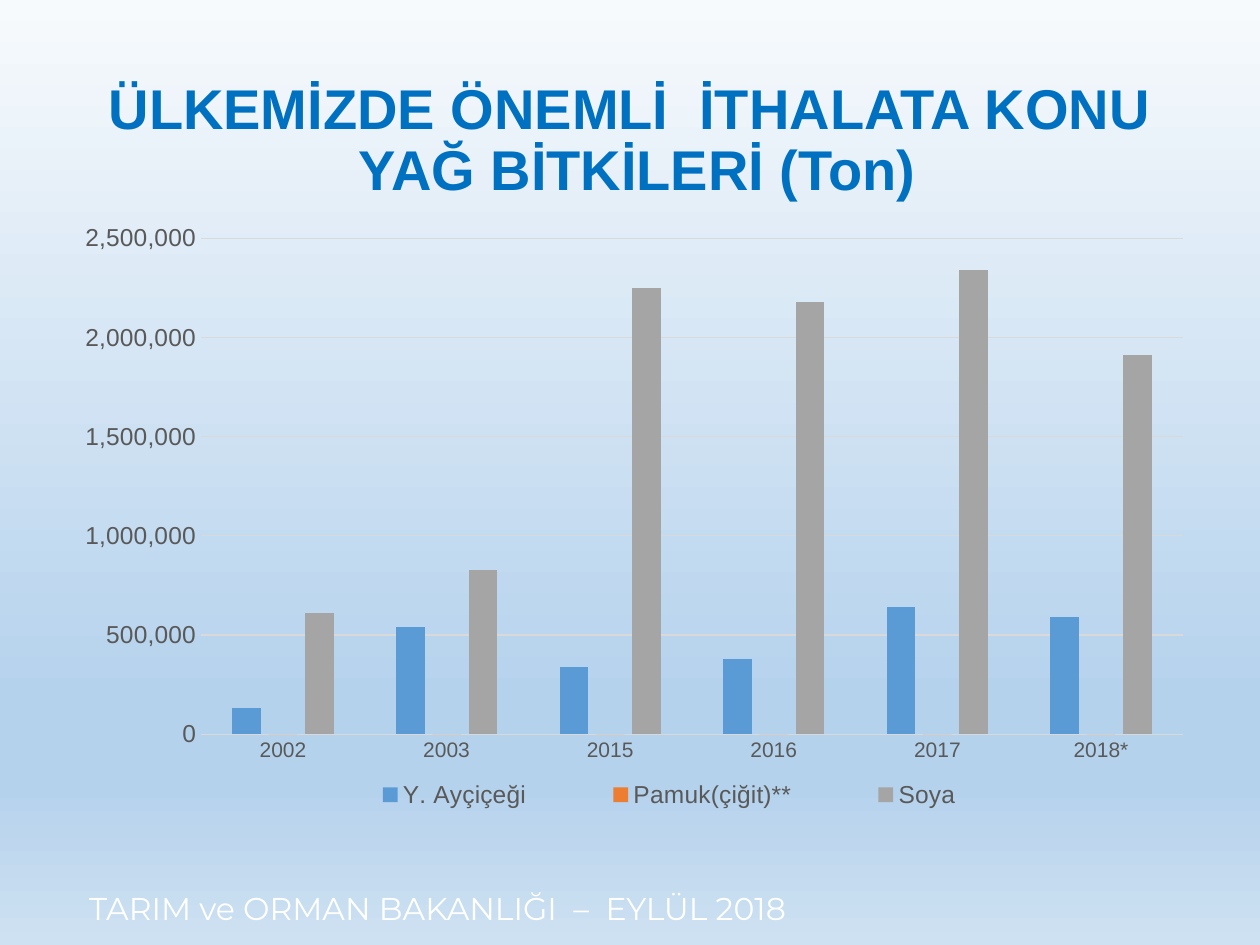
from lxml import etree
from pptx import Presentation
from pptx.chart.data import CategoryChartData
from pptx.dml.color import RGBColor
from pptx.enum.chart import XL_CHART_TYPE, XL_LEGEND_POSITION, XL_TICK_MARK
from pptx.enum.text import MSO_ANCHOR, PP_ALIGN
from pptx.oxml import parse_xml
from pptx.oxml.ns import nsdecls, qn
from pptx.util import Inches, Pt

COLUMNS = XL_CHART_TYPE.COLUMN_CLUSTERED
BOTTOM = XL_LEGEND_POSITION.BOTTOM
NO_TICK = XL_TICK_MARK.NONE
MIDDLE, TOP = MSO_ANCHOR.MIDDLE, MSO_ANCHOR.TOP
CENTER, LEFT = PP_ALIGN.CENTER, PP_ALIGN.LEFT

WHITE = RGBColor(0xFF, 0xFF, 0xFF)
TITLE = RGBColor(0x00, 0x70, 0xC0)
GRAY = RGBColor(0x59, 0x59, 0x59)
RULE = RGBColor(0xD9, 0xD9, 0xD9)
BLUE = RGBColor(0x5B, 0x9B, 0xD5)
ORANGE = RGBColor(0xED, 0x7D, 0x31)
SILVER = RGBColor(0xA5, 0xA5, 0xA5)
SKY = [
    (0, RGBColor(0xF7, 0xFA, 0xFD)),
    (74, RGBColor(0xB5, 0xD2, 0xEC)),
    (83, RGBColor(0xB5, 0xD2, 0xEC)),
    (100, RGBColor(0xCE, 0xE1, 0xF2)),
]


def set_font(font, color, look):
    font.color.rgb = color
    for key, value in look.items():
        setattr(font, key, value)


def set_layout(parent, after, inner, box):
    """Place a chart part by fractions of the chart's size."""
    for old in parent.findall(qn("c:layout")):
        parent.remove(old)
    target = '<c:layoutTarget val="inner"/>' if inner else ""
    modes = '<c:xMode val="edge"/><c:yMode val="edge"/>'
    sizes = "".join(f'<c:{key} val="{part}"/>' for key, part in zip("xywh", box))
    layout = parse_xml(
        f'<c:layout {nsdecls("c")}><c:manualLayout>{target}{modes}{sizes}'
        "</c:manualLayout></c:layout>"
    )
    if after is None:
        parent.insert(0, layout)
    else:
        after.addnext(layout)


prs = Presentation()
prs.slide_width, prs.slide_height = Inches(10), Inches(7.5)
slide = prs.slides.add_slide(prs.slide_layouts[6])

# Background gradient, top to bottom
fill = slide.background.fill
fill.gradient()
fill.gradient_angle = 270
stops = slide.background._cSld.find(".//" + qn("a:gsLst"))
for stop in list(stops):
    stops.remove(stop)
for place, color in SKY:
    stop = etree.SubElement(stops, qn("a:gs"), pos=str(place * 1000))
    etree.SubElement(stop, qn("a:srgbClr"), val=str(color))

# Footer and title
texts = [
    ("TARIM ve ORMAN BAKANLIĞI  –  EYLÜL 2018", (0.61, 7.01, 9.39, 0.4),
     TOP, LEFT, 1, WHITE, {"name": "Montserrat", "size": Pt(18)}),
    ("ÜLKEMİZDE ÖNEMLİ  İTHALATA KONU \vYAĞ BİTKİLERİ (Ton)", (0.75, 0.4, 8.62, 1.45),
     MIDDLE, CENTER, 0.9, TITLE, {"name": "Arial", "size": Pt(32), "bold": True}),
]
for words, box, anchor, align, space, color, look in texts:
    frame = slide.shapes.add_textbox(*map(Inches, box)).text_frame
    frame.word_wrap = True
    frame.vertical_anchor = anchor
    para = frame.paragraphs[0]
    para.text = words
    para.alignment = align
    para.line_spacing = space
    for run in para.runs:
        set_font(run.font, color, look)

# Import chart
series = [
    ("Y. Ayçiçeği", BLUE, (130000, 540000, 340000, 380000, 640000, 590000)),
    ("Pamuk(çiğit)**", ORANGE, (0, 0, 0, 0, 0, 0)),
    ("Soya", SILVER, (610000, 830000, 2250000, 2180000, 2340000, 1910000)),
]
data = CategoryChartData(number_format="#,##0")
data.categories = ["2002", "2003", "2015", "2016", "2017", "2018*"]
for name, color, values in series:
    data.add_series(name, values)
box = map(Inches, (0.51, 1.7, 9.06, 4.8))
chart = slide.shapes.add_chart(COLUMNS, *box, data).chart
chart.has_title = False
chart.font.name, chart.font.size = "Calibri", Pt(10)

plot = chart.plots[0]
plot.gap_width, plot.overlap = 219, -27
plot.vary_by_categories = False
for bars, (name, color, values) in zip(plot.series, series):
    bars.format.fill.solid()
    bars.format.fill.fore_color.rgb = color

# Axes
years, tons = chart.category_axis, chart.value_axis
for axis, size in ((years, 12), (tons, 14)):
    axis.major_tick_mark = axis.minor_tick_mark = NO_TICK
    set_font(axis.tick_labels.font, GRAY, {"name": "Arial", "size": Pt(size)})
tons.minimum_scale, tons.maximum_scale, tons.major_unit = 0, 2500000, 500000
tons.tick_labels.number_format = "#,##0"
tons.tick_labels.number_format_is_linked = False
tons.format.line.fill.background()
for line in (years.format.line, tons.major_gridlines.format.line):
    line.color.rgb = RULE
    line.width = Pt(0.75)

# Legend
chart.has_legend = True
legend = chart.legend
legend.position = BOTTOM
legend.include_in_layout = False
set_font(legend.font, GRAY, {"name": "Arial", "size": Pt(14)})

# Chart part positions
area = plot._element.getparent()
set_layout(area, None, True, (0.12, 0.04, 0.86, 0.82))
key = legend._element
set_layout(key, key.find(qn("c:legendPos")), False, (0.21, 0.92, 0.64, 0.08))

prs.save("out.pptx")
